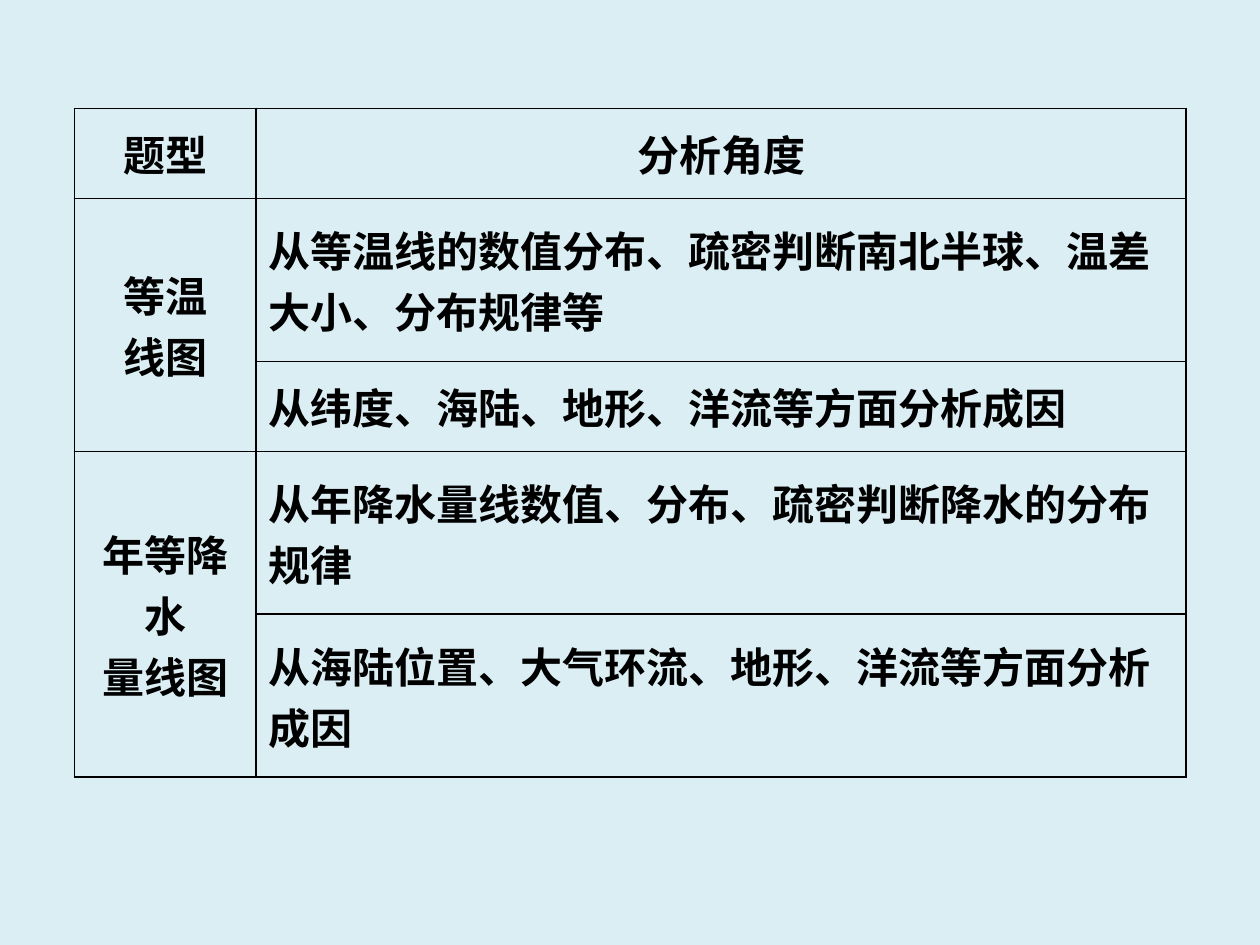
from lxml.etree import SubElement
from pptx import Presentation
from pptx.dml.color import RGBColor
from pptx.enum.text import MSO_ANCHOR, PP_ALIGN
from pptx.oxml.ns import qn
from pptx.util import Pt

COLORS = {"background": "DBEEF4", "ink": "000000"}
FONT = "Times New Roman"
HEADER = ("题型", "分析角度")
TOPICS = [
    ("等温\n线图", [
        ("从等温线的数值分布、疏密判断南北半球、温差大小、分布规律等", 2),
        ("从纬度、海陆、地形、洋流等方面分析成因", 1),
    ]),
    ("年等降水\n量线图", [
        ("从年降水量线数值、分布、疏密判断降水的分布规律", 2),
        ("从海陆位置、大气环流、地形、洋流等方面分析成因", 2),
    ]),
]
ROW_HEIGHTS = {1: 51.6, 2: 92.95}  # by number of text lines
TOPIC_WIDTH = 103.9


def set_borders(cell):
    tc_pr = cell._tc.get_or_add_tcPr()
    for i, side in enumerate(("lnL", "lnR", "lnT", "lnB")):
        ln = tc_pr.makeelement(qn(f"a:{side}"), {"w": str(Pt(1))})
        fill = SubElement(ln, qn("a:solidFill"))
        SubElement(fill, qn("a:srgbClr"), val=COLORS["ink"])
        tc_pr.insert(i, ln)


def fill_cell(cell, text, align):
    cell.text_frame.text = text
    cell.vertical_anchor = MSO_ANCHOR.MIDDLE
    for p in cell.text_frame.paragraphs:
        p.alignment = align
        for r in p.runs:
            r.font.name = FONT
            r.font.size = Pt(24)
            r.font.bold = True
            r.font.color.rgb = RGBColor.from_string(COLORS["ink"])


def add_analysis_table(s, left, top, width):
    lines = [1] + [n for _, angles in TOPICS for _, n in angles]
    heights = [Pt(ROW_HEIGHTS[n]) for n in lines]
    table = s.shapes.add_table(
        len(lines), 2, Pt(left), Pt(top), Pt(width), sum(heights)).table
    table.first_row = table.horz_banding = False
    table.columns[0].width = Pt(TOPIC_WIDTH)
    table.columns[1].width = Pt(width - TOPIC_WIDTH)
    for row, height in zip(table.rows, heights):
        row.height = height
    for cell in table.iter_cells():
        cell.fill.background()
        set_borders(cell)

    for col, text in enumerate(HEADER):
        fill_cell(table.cell(0, col), text, PP_ALIGN.CENTER)
    row = 1
    for topic, angles in TOPICS:
        last = row + len(angles) - 1
        table.cell(row, 0).merge(table.cell(last, 0))
        fill_cell(table.cell(row, 0), topic, PP_ALIGN.CENTER)
        for i, (text, _) in enumerate(angles):
            fill_cell(table.cell(row + i, 1), text, PP_ALIGN.LEFT)
        row = last + 1


def main():
    prs = Presentation()
    prs.slide_width, prs.slide_height = Pt(720), Pt(540)
    s = prs.slides.add_slide(prs.slide_layouts[6])
    s.background.fill.solid()
    s.background.fill.fore_color.rgb = RGBColor.from_string(COLORS["background"])
    add_analysis_table(s, 42.5, 61.9, 635.2)
    prs.save("out.pptx")


if __name__ == "__main__":
    main()
